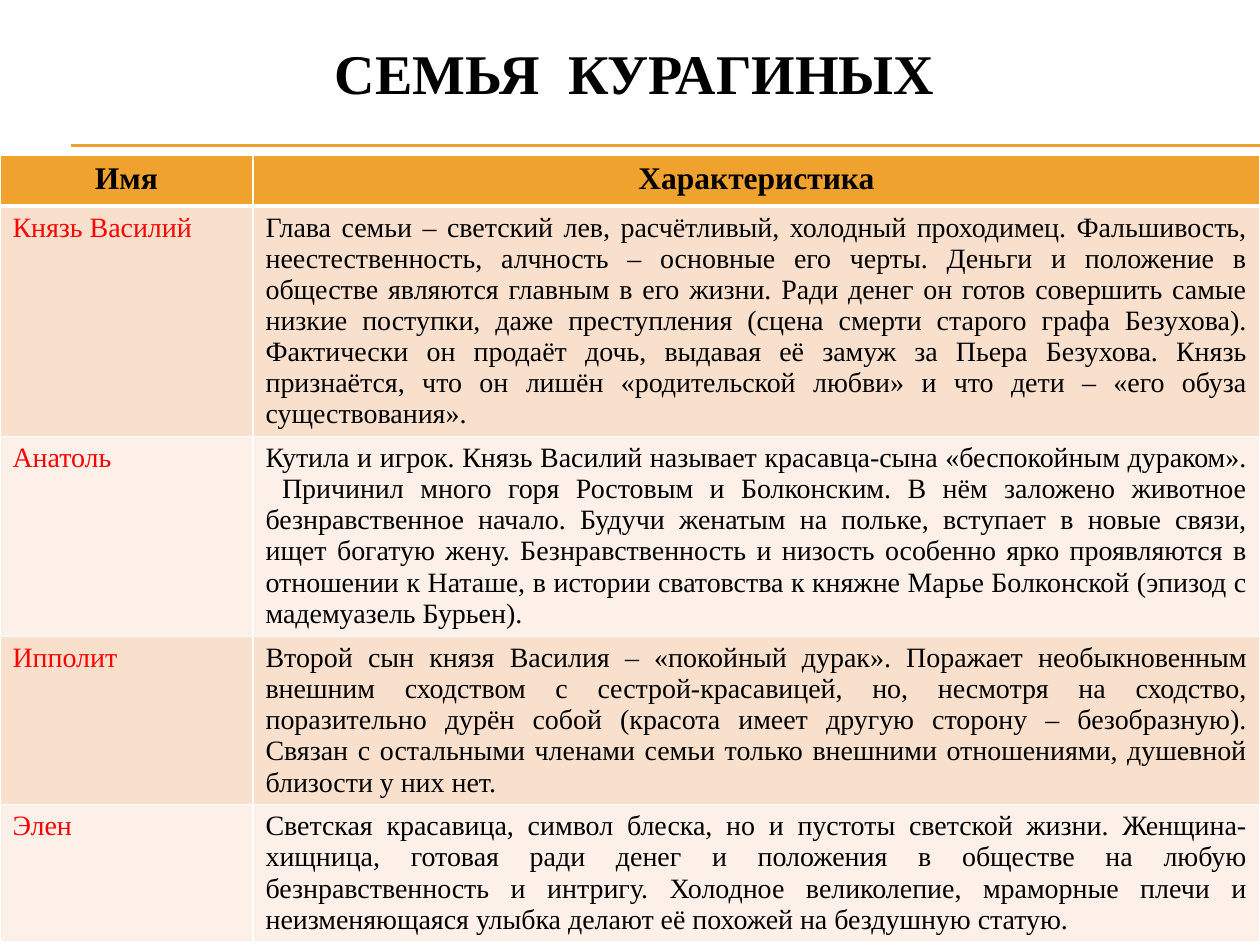
from dataclasses import dataclass

from lxml.etree import SubElement
from pptx import Presentation
from pptx.dml.color import RGBColor
from pptx.enum.shapes import MSO_CONNECTOR
from pptx.enum.text import MSO_ANCHOR, PP_ALIGN
from pptx.oxml.ns import qn
from pptx.util import Pt


@dataclass(frozen=True)
class Theme:
    font: str = "Times New Roman"
    accent: str = "F0A22E"
    bands: tuple = ("F9E0CD", "FCF0E8")
    border: str = "FFFFFF"
    text: str = "000000"
    name: str = "FF0000"
    title_size: int = 32
    header_size: int = 18
    body_size: int = 16


THEME = Theme()
EMU_PER_PX = 914400 / 126

HEADERS = ("Имя", "Характеристика")
FAMILY = (
    ("Князь Василий",
     "Глава семьи – светский лев, расчётливый, холодный проходимец. Фальшивость, "
     "неестественность, алчность – основные его черты. Деньги и положение в обществе "
     "являются главным в его жизни. Ради денег он готов совершить самые низкие поступки, "
     "даже преступления (сцена смерти старого графа Безухова). Фактически он продаёт дочь, "
     "выдавая её замуж за Пьера Безухова. Князь признаётся, что он лишён «родительской "
     "любви» и что дети – «его обуза существования»."),
    ("Анатоль",
     "Кутила и игрок. Князь Василий называет красавца-сына «беспокойным дураком».  "
     "Причинил много горя Ростовым и Болконским. В нём заложено животное безнравственное "
     "начало. Будучи женатым на польке, вступает в новые связи, ищет богатую жену. "
     "Безнравственность и низость особенно ярко проявляются в отношении к Наташе, в истории "
     "сватовства к княжне Марье Болконской (эпизод с мадемуазель Бурьен)."),
    ("Ипполит",
     "Второй сын князя Василия – «покойный дурак». Поражает необыкновенным внешним "
     "сходством с сестрой-красавицей, но, несмотря на сходство, поразительно дурён собой "
     "(красота имеет другую сторону – безобразную). Связан с остальными членами семьи "
     "только внешними отношениями, душевной близости у них нет."),
    ("Элен",
     "Светская красавица, символ блеска, но и пустоты светской жизни. Женщина-хищница, "
     "готовая ради денег и положения в обществе на любую безнравственность и интригу. "
     "Холодное великолепие, мраморные плечи и неизменяющаяся улыбка делают её похожей на "
     "бездушную статую."),
)
COLUMN_WIDTHS = (253, 1007)
ROW_HEIGHTS = (51, 230, 200, 168, 136)


def px(*lengths):
    return [round(length * EMU_PER_PX) for length in lengths]


def write(text_frame, text, size, color, alignment, bold=False):
    text_frame.text = text
    paragraph = text_frame.paragraphs[0]
    paragraph.alignment = alignment
    font = paragraph.runs[0].font
    font.name, font.size, font.bold = THEME.font, Pt(size), bold
    font.color.rgb = RGBColor.from_string(color)


presentation = Presentation()
presentation.slide_width, presentation.slide_height = px(1260, 945)
slide = presentation.slides.add_slide(presentation.slide_layouts[5])

# Double rule under the title
for y in (145, 146):
    rule = slide.shapes.add_connector(MSO_CONNECTOR.STRAIGHT, *px(71, y, 1260, y))
    rule.line.color.rgb = RGBColor.from_string(THEME.accent)
    rule.line.width = Pt(0.75)
    SubElement(rule._element.spPr, qn("a:effectLst"))

title = slide.shapes.title
title.left, title.top, title.width, title.height = px(64, 0, 1142, 145)
title.text_frame.vertical_anchor = MSO_ANCHOR.MIDDLE
write(title.text_frame, "СЕМЬЯ  КУРАГИНЫХ", THEME.title_size, THEME.text,
      PP_ALIGN.CENTER, bold=True)

# Family table
rows = (HEADERS, *FAMILY)
table = slide.shapes.add_table(
    len(rows), len(HEADERS), *px(0, 155, sum(COLUMN_WIDTHS), sum(ROW_HEIGHTS))
).table
for column, width in zip(table.columns, px(*COLUMN_WIDTHS)):
    column.width = width
for row, height in zip(table.rows, px(*ROW_HEIGHTS)):
    row.height = height

for row_index, texts in enumerate(rows):
    is_header = row_index == 0
    fill = THEME.accent if is_header else THEME.bands[(row_index - 1) % 2]
    for column_index, text in enumerate(texts):
        cell = table.cell(row_index, column_index)
        if is_header:
            write(cell.text_frame, text, THEME.header_size, THEME.text,
                  PP_ALIGN.CENTER, bold=True)
        else:
            color = THEME.name if column_index == 0 else THEME.text
            write(cell.text_frame, text, THEME.body_size, color, PP_ALIGN.JUSTIFY)

        properties = cell._tc.get_or_add_tcPr()
        for side in "LRTB":
            below_header = (row_index, side) in ((0, "B"), (1, "T"))
            line = SubElement(properties, qn(f"a:ln{side}"),
                              w=str(Pt(3 if below_header else 1)))
            SubElement(SubElement(line, qn("a:solidFill")), qn("a:srgbClr"),
                       val=THEME.border)
        cell.fill.solid()
        cell.fill.fore_color.rgb = RGBColor.from_string(fill)

presentation.save("out.pptx")
